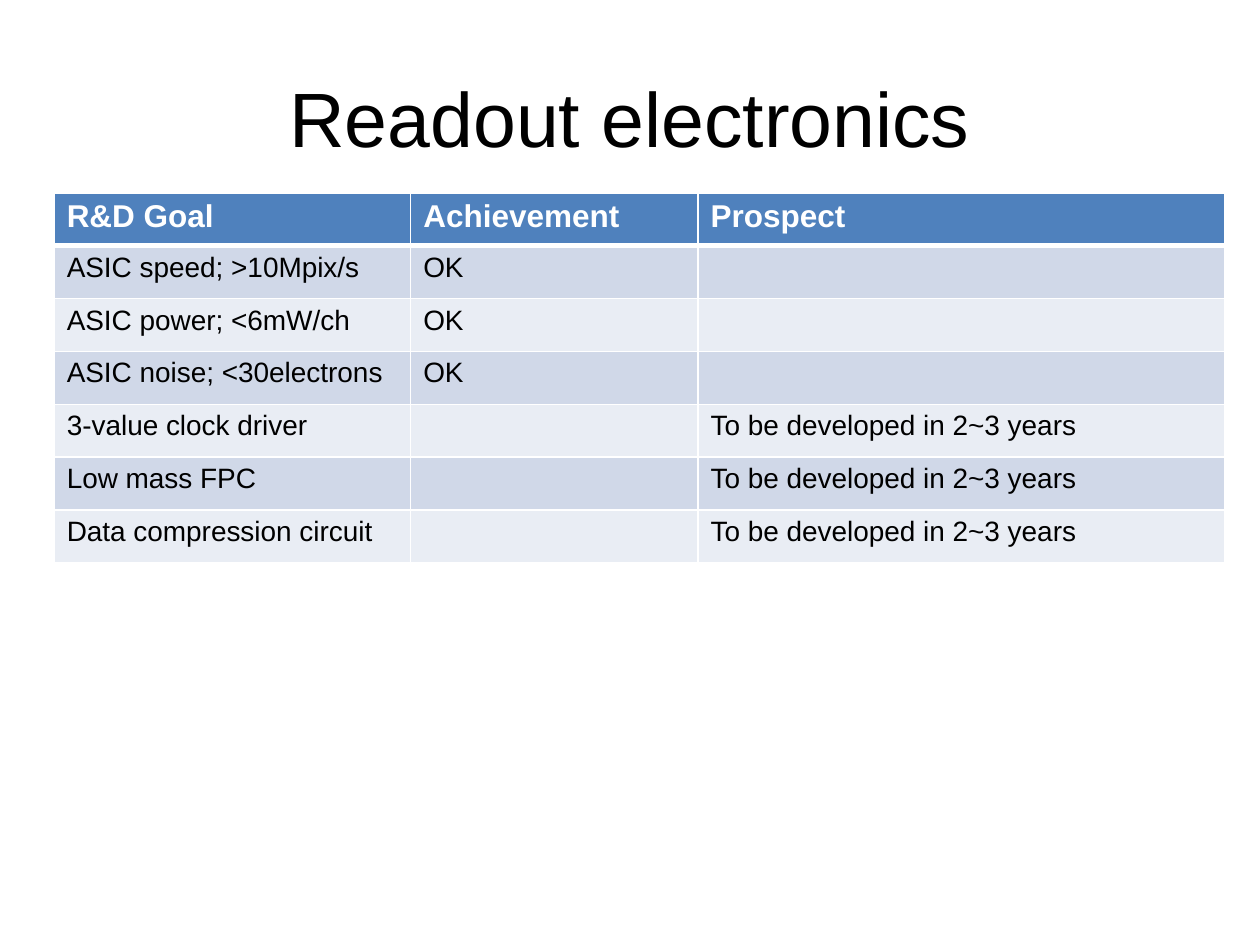
from lxml import etree
from pptx import Presentation
from pptx import util as u
from pptx.dml.color import RGBColor
from pptx.enum import text
from pptx.oxml import ns

BLACK = RGBColor(0x00, 0x00, 0x00)
WHITE = RGBColor(0xFF, 0xFF, 0xFF)
HEADER_BLUE = RGBColor(0x4F, 0x81, 0xBD)
BANDS = [RGBColor(0xE9, 0xED, 0xF4), RGBColor(0xD0, 0xD8, 0xE8)]

PLAN = "To be developed in 2~3 years"
ROWS = [
    ("R&D Goal", "Achievement", "Prospect"),
    ("ASIC speed; >10Mpix/s", "OK", ""),
    ("ASIC power; <6mW/ch", "OK", ""),
    ("ASIC noise; <30electrons", "OK", ""),
    ("3-value clock driver", "", PLAN),
    ("Low mass FPC", "", PLAN),
    ("Data compression circuit", "", PLAN),
]
COLUMN_WIDTHS = [2.83, 2.28, 4.18]
ROW_HEIGHT = 0.42


def add_span(para, words, size, color, bold=False):
    span = para.add_run()
    span.text = words
    span.font.name = "Arial"
    span.font.size = u.Pt(size)
    span.font.bold = bold
    span.font.color.rgb = color


def add_border(cell, side, points):
    properties = cell._tc.get_or_add_tcPr()
    line = etree.SubElement(properties, ns.qn(f"a:ln{side}"), w=str(u.Pt(points)))
    fill = etree.SubElement(line, ns.qn("a:solidFill"))
    etree.SubElement(fill, ns.qn("a:srgbClr"), val=str(WHITE))


deck = Presentation()
deck.slide_width = u.Inches(10)
deck.slide_height = u.Inches(7.5)
page = deck.slides.add_slide(deck.slide_layouts[6])

title_box = page.shapes.add_textbox(u.Inches(0.5), u.Inches(0.3), u.Inches(9), u.Inches(1.25))
title_box.text_frame.word_wrap = True
title_box.text_frame.vertical_anchor = text.MSO_ANCHOR.MIDDLE
title = title_box.text_frame.paragraphs[0]
title.alignment = text.PP_ALIGN.CENTER
add_span(title, "Readout electronics", 44, BLACK)

table = page.shapes.add_table(
    len(ROWS), len(COLUMN_WIDTHS), u.Inches(0.43), u.Inches(1.53),
    u.Inches(sum(COLUMN_WIDTHS)), u.Inches(ROW_HEIGHT * len(ROWS)),
).table
for column, width in zip(table.columns, COLUMN_WIDTHS):
    column.width = u.Inches(width)

for row_index, row in enumerate(ROWS):
    header = row_index == 0
    table.rows[row_index].height = u.Inches(ROW_HEIGHT)
    for column_index, words in enumerate(row):
        cell = table.cell(row_index, column_index)
        for side in "LRTB":
            thick = (header and side == "B") or (row_index == 1 and side == "T")
            add_border(cell, side, 3 if thick else 1)
        cell.fill.solid()
        cell.fill.fore_color.rgb = HEADER_BLUE if header else BANDS[row_index % 2]
        if words:
            para = cell.text_frame.paragraphs[0]
            add_span(para, words, 18 if header else 16, WHITE if header else BLACK, header)

deck.save("out.pptx")
